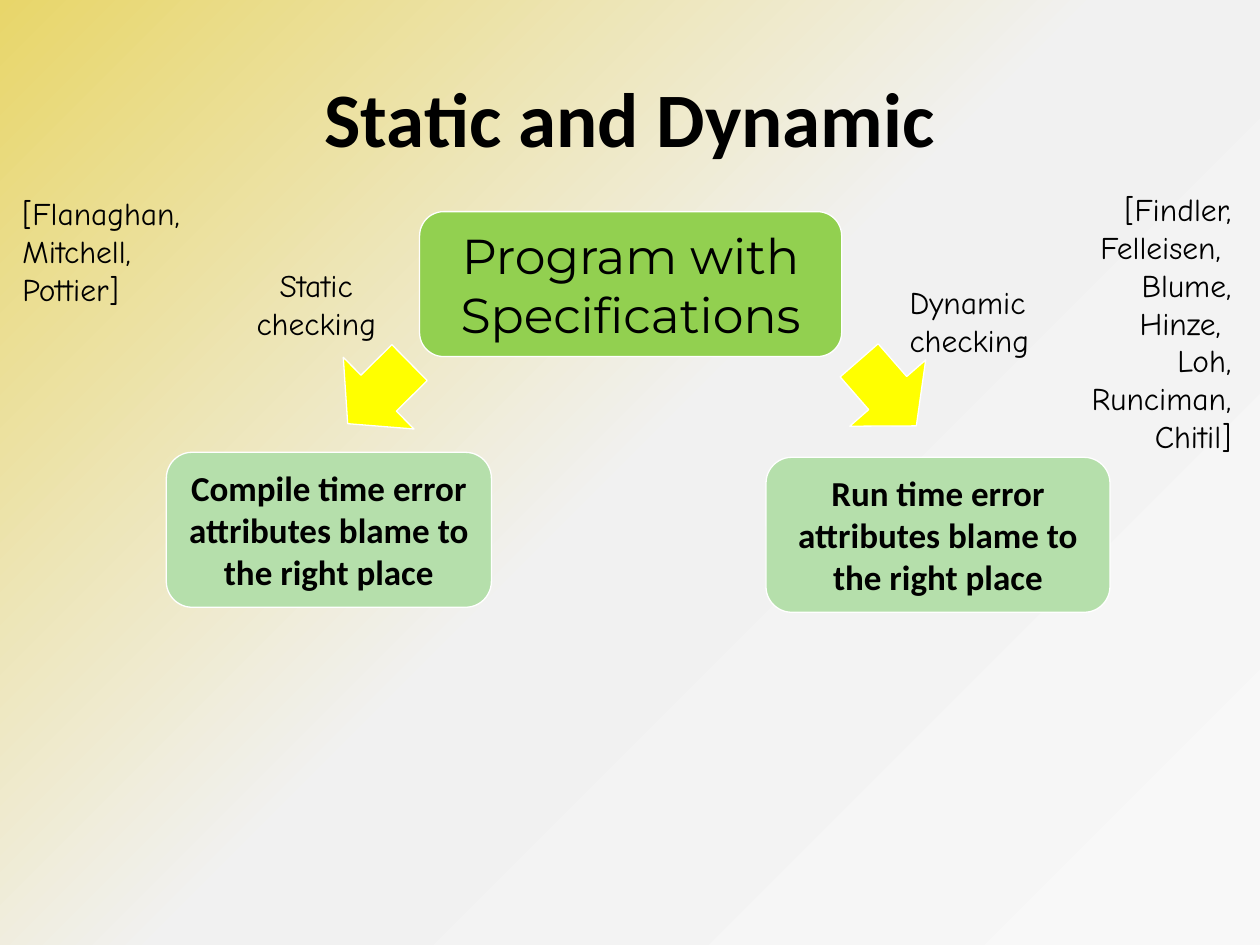
import pptx
import pptx.util
import pptx.dml.color
import pptx.enum.shapes
import pptx.enum.text
import pptx.oxml
import pptx.oxml.ns

Inches = pptx.util.Inches
SHAPE = pptx.enum.shapes.MSO_SHAPE
ALIGN = pptx.enum.text.PP_ALIGN
ANCHOR = pptx.enum.text.MSO_ANCHOR
AUTO_SIZE = pptx.enum.text.MSO_AUTO_SIZE

COLORS = {
    "text": "000000",
    "outline": "FFFFFF",
    "program": "92D050",
    "outcome": "B5DFAB",
    "arrow": "FFFF00",
}
BACKGROUND_STOPS = [(0, "E8D66A"), (50, "F1F1F1"), (50, "F1F1F1"), (100, "F8F8F8")]
BACKGROUND_ANGLE = 45

TITLE_FONT = {"name": "Calibri", "size": pptx.util.Pt(44), "bold": True}
PROGRAM_FONT = {"name": "Montserrat", "size": pptx.util.Pt(28), "bold": False}
OUTCOME_FONT = {"name": "Calibri", "size": pptx.util.Pt(20), "bold": True}
NOTE_FONT = {"name": "Comic Neue", "size": pptx.util.Pt(18), "bold": False}


def rgb(key):
    return pptx.dml.color.RGBColor.from_string(COLORS[key])


def set_attributes(target, values):
    for attribute, value in values.items():
        setattr(target, attribute, value)


def paint_background(slide):
    """Fill the background with the four-stop diagonal gradient."""
    fill = slide.background.fill
    fill.gradient()
    fill.gradient_angle = 360 - BACKGROUND_ANGLE  # python-pptx counts anticlockwise
    stops = slide.background._cSld.find(".//" + pptx.oxml.ns.qn("a:gsLst"))
    for old_stop in list(stops):
        stops.remove(old_stop)
    for percent, color in BACKGROUND_STOPS:
        stops.append(pptx.oxml.parse_xml(
            f'<a:gs {pptx.oxml.ns.nsdecls("a")} pos="{percent * 1000}">'
            f'<a:srgbClr val="{color}"/></a:gs>'))


def write(frame, paragraphs, font, align, **frame_format):
    """Put one paragraph per entry into a text frame."""
    set_attributes(frame, {"word_wrap": True, **frame_format})
    for index, words in enumerate(paragraphs):
        paragraph = frame.paragraphs[0] if index == 0 else frame.add_paragraph()
        paragraph.alignment = align
        run = paragraph.add_run()
        run.text = words
        set_attributes(run.font, font)
        run.font.color.rgb = rgb("text")


def add_label(slide, box, paragraphs, font, align, **frame_format):
    label = slide.shapes.add_textbox(*map(Inches, box))
    write(label.text_frame, paragraphs, font, align, **frame_format)


def add_block(slide, preset, box, fill, rotation=0):
    block = slide.shapes.add_shape(preset, *map(Inches, box))
    set_attributes(block, {"rotation": rotation})
    block.shadow.inherit = False
    block.fill.solid()
    block.fill.fore_color.rgb = rgb(fill)
    block.line.color.rgb = rgb("outline")
    block.line.width = pptx.util.Pt(0.75)
    return block


def add_stage(slide, box, words, fill, font):
    stage = add_block(slide, SHAPE.ROUNDED_RECTANGLE, box, fill)
    write(stage.text_frame, [words], font, ALIGN.CENTER,
          vertical_anchor=ANCHOR.MIDDLE, auto_size=AUTO_SIZE.SHAPE_TO_FIT_TEXT)


def main():
    deck = pptx.Presentation()
    set_attributes(deck, {"slide_width": Inches(10), "slide_height": Inches(7.5)})
    slide = deck.slides.add_slide(deck.slide_layouts[6])
    paint_background(slide)

    # Title
    add_label(slide, (0.5, 0.3, 9, 1.25), ["Static and Dynamic"], TITLE_FONT,
              ALIGN.CENTER, vertical_anchor=ANCHOR.MIDDLE)

    # Program and the two kinds of error it leads to
    add_stage(slide, (3.33, 1.68, 3.35, 1.15), "Program with Specifications",
              "program", PROGRAM_FONT)
    for moment, box in (("Run", (6.08, 3.63, 2.73, 1.23)),
                        ("Compile", (1.32, 3.59, 2.58, 1.23))):
        add_stage(slide, box, f"{moment} time error attributes blame to the right place",
                  "outcome", OUTCOME_FONT)

    # Arrows from the program to each error
    for left, rotation in ((2.66, 135.4), (6.7, 48.9)):
        add_block(slide, SHAPE.RIGHT_ARROW, (left, 2.72, 0.69, 0.8), "arrow", rotation)

    # Kinds of checking
    for kind, left, top, align in (("Dynamic", 7.12, 2.2, ALIGN.LEFT),
                                   ("Static", 1.9, 2.06, ALIGN.CENTER)):
        add_label(slide, (left, top, 1.22, 0.71), [kind, "checking"], NOTE_FONT, align,
                  word_wrap=False, auto_size=AUTO_SIZE.SHAPE_TO_FIT_TEXT)

    # Authors cited for each kind
    for authors, box, align in (
        ("[Findler, Felleisen,  Blume, Hinze,  Loh, Runciman, Chitil]",
         (8.46, 1.46, 1.41, 2.22), ALIGN.RIGHT),
        ("[Flanaghan, Mitchell, Pottier]", (0.08, 1.49, 1.59, 1.01), ALIGN.LEFT),
    ):
        add_label(slide, box, [authors], NOTE_FONT, align,
                  auto_size=AUTO_SIZE.SHAPE_TO_FIT_TEXT)

    deck.save("out.pptx")


if __name__ == "__main__":
    main()
